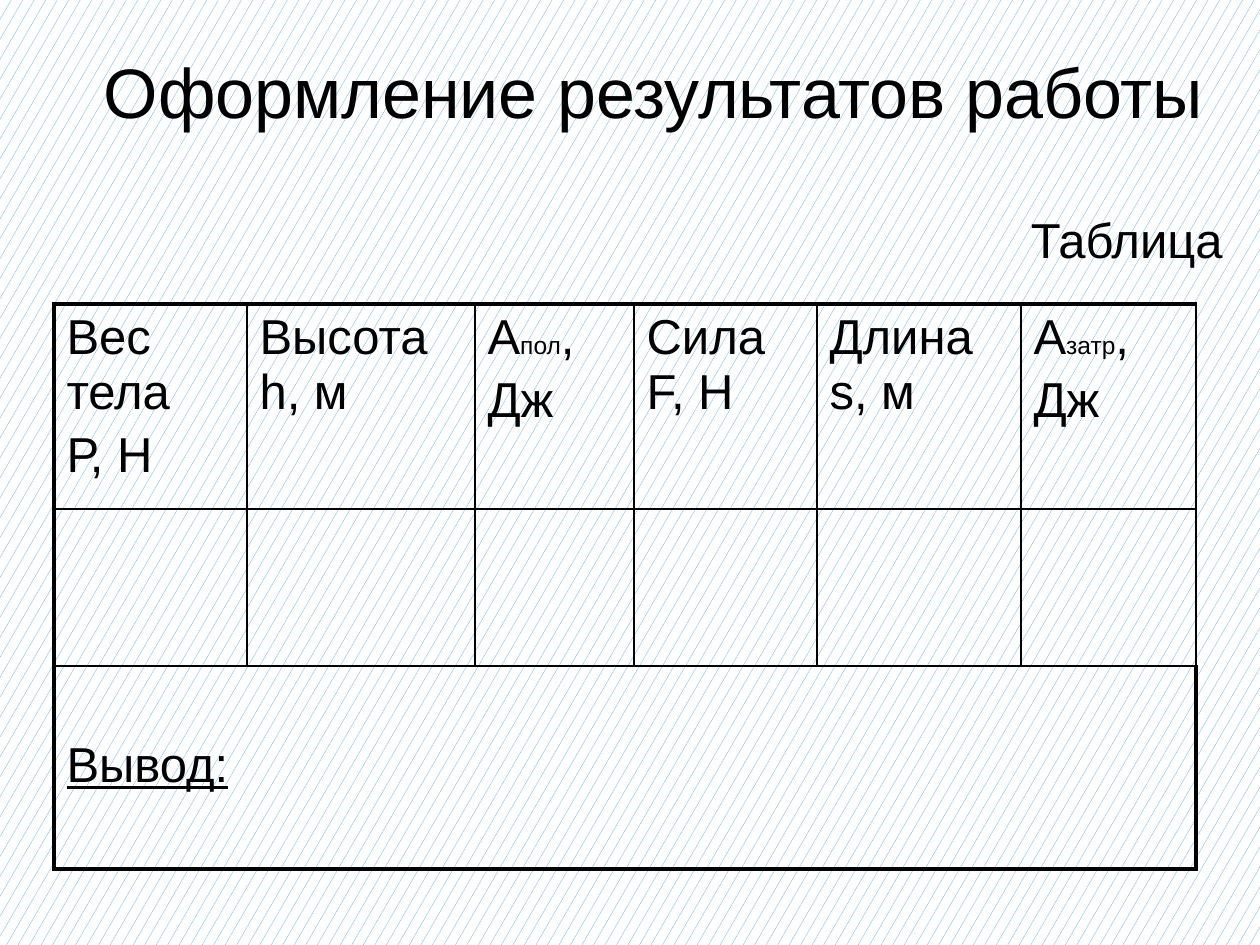
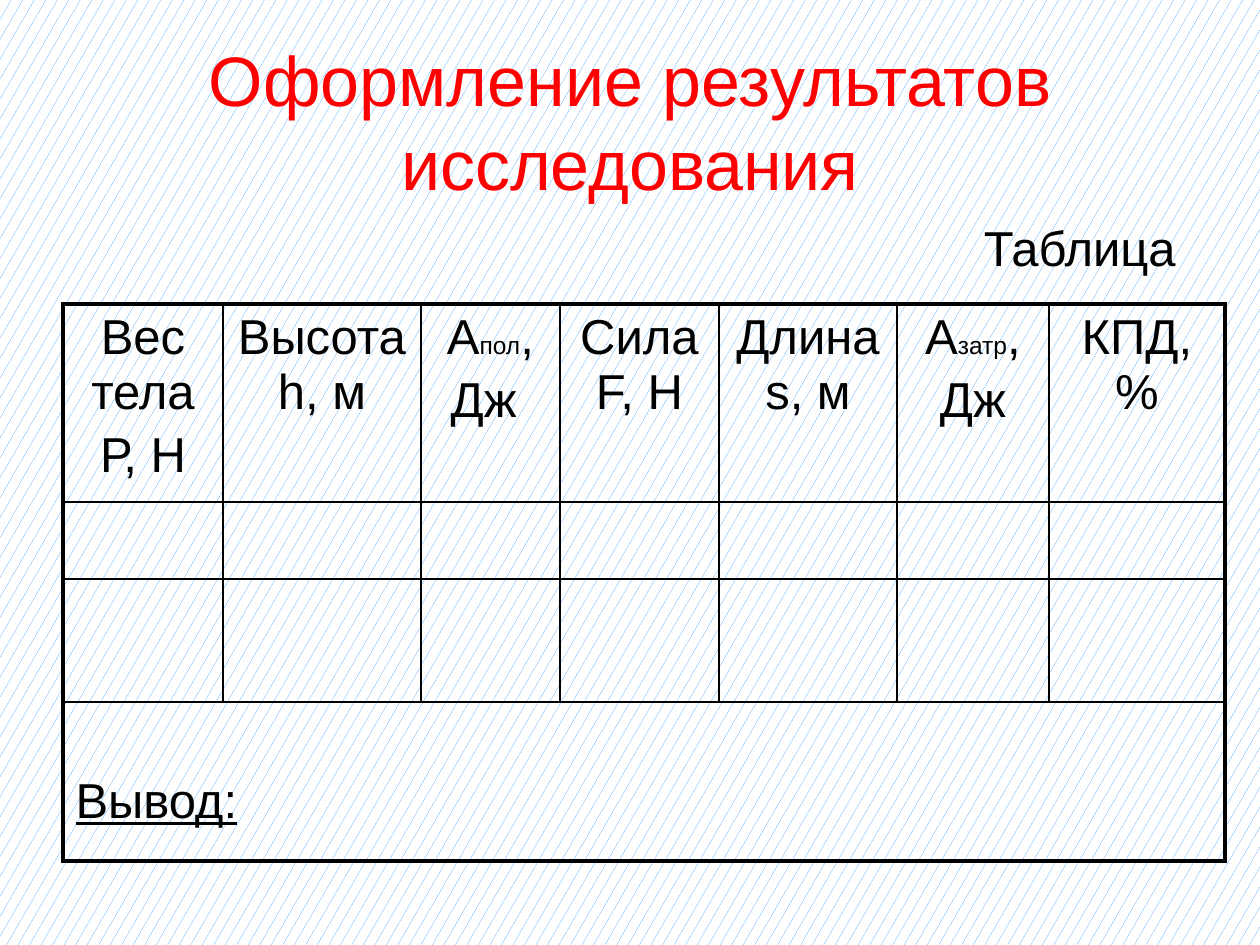
from lxml.etree import SubElement
from pptx import Presentation
from pptx.dml.color import RGBColor
from pptx.enum.dml import MSO_PATTERN
from pptx.enum.text import MSO_ANCHOR, PP_ALIGN
from pptx.oxml.ns import qn
from pptx.util import Pt

EMU_PER_PX = 914400 / 126
BLACK = RGBColor(0x00, 0x00, 0x00)
RED = RGBColor(0xFF, 0x00, 0x00)
WHITE = RGBColor(0xFF, 0xFF, 0xFF)
HATCH_BLUE = RGBColor(0x33, 0x99, 0xFF)
FONT = "Arial"
TITLE_SIZE, BODY_SIZE, INDEX_SIZE = 40, 28, 14
OUTER_LINE, INNER_LINE = 2.25, 1


def px(value):
    return round(value * EMU_PER_PX)


def add_run(paragraph, text, size=BODY_SIZE, color=BLACK):
    run = paragraph.add_run()
    run.text = text
    run.font.name = FONT
    run.font.size = Pt(size)
    run.font.color.rgb = color
    return run


WEIGHT = [[("Вес тела", BODY_SIZE)], [("Р, Н", BODY_SIZE)]]
HEIGHT = [[("Высота h, м", BODY_SIZE)]]
USEFUL_WORK = [[("А", BODY_SIZE), ("пол", INDEX_SIZE), (",", BODY_SIZE)], [("Дж ", BODY_SIZE)]]
FORCE = [[("Сила F, Н", BODY_SIZE)]]
LENGTH = [[("Длина s, м", BODY_SIZE)]]
SPENT_WORK = [[("А", BODY_SIZE), ("затр", INDEX_SIZE), (",", BODY_SIZE)], [("Дж", BODY_SIZE)]]
EFFICIENCY = [[("КПД, %", BODY_SIZE)]]
HEADERS = [WEIGHT, HEIGHT, USEFUL_WORK, FORCE, LENGTH, SPENT_WORK]

SLIDES = [
    {
        "title": "Оформление результатов работы",
        "title_box": (0, 42, 1215, 93),
        "title_color": BLACK,
        "title_align": PP_ALIGN.RIGHT,
        "caption_box": (935, 203, 300, 69),
        "table_left": 54,
        "columns": [193, 228, 159, 183, 204, 175],
        "rows": [205, 157, 203],
        "headers": HEADERS,
        "header_align": PP_ALIGN.LEFT,
        "right_line": INNER_LINE,
    },
    {
        "title": "Оформление результатов исследования",
        "title_box": (25, 30, 1210, 174),
        "title_color": RED,
        "title_align": PP_ALIGN.CENTER,
        "caption_box": (888, 211, 300, 69),
        "table_left": 63,
        "columns": [160, 198, 139, 159, 178, 152, 176],
        "rows": [186, 77, 123, 159],
        "headers": HEADERS + [EFFICIENCY],
        "header_align": PP_ALIGN.CENTER,
        "right_line": OUTER_LINE,
    },
]
TABLE_TOP = 304

presentation = Presentation()
presentation.slide_width = px(1260)
presentation.slide_height = px(945)

for content in SLIDES:
    slide = presentation.slides.add_slide(presentation.slide_layouts[6])
    background = slide.background.fill
    background.patterned()
    background.pattern = MSO_PATTERN.SMALL_CONFETTI
    background.fore_color.rgb = HATCH_BLUE
    background.back_color.rgb = WHITE

    for text, box, size, color, align in [
        (content["title"], content["title_box"], TITLE_SIZE, content["title_color"], content["title_align"]),
        ("Таблица", content["caption_box"], BODY_SIZE, BLACK, PP_ALIGN.RIGHT),
    ]:
        frame = slide.shapes.add_textbox(*map(px, box)).text_frame
        frame.word_wrap = True
        paragraph = frame.paragraphs[0]
        paragraph.alignment = align
        add_run(paragraph, text, size, color)

    columns, rows = content["columns"], content["rows"]
    table = slide.shapes.add_table(
        len(rows), len(columns), px(content["table_left"]), px(TABLE_TOP), px(sum(columns)), px(sum(rows))
    ).table
    table.first_row = False
    table.horz_banding = False
    for column, width in zip(table.columns, columns):
        column.width = px(width)
    for row, height in zip(table.rows, rows):
        row.height = px(height)

    last_row = len(rows) - 1
    conclusion = table.cell(last_row, 0)
    conclusion.merge(table.cell(last_row, len(columns) - 1))
    conclusion.margin_top = px(72)
    add_run(conclusion.text_frame.paragraphs[0], "Вывод:").font.underline = True

    for column_index, header in enumerate(content["headers"]):
        frame = table.cell(0, column_index).text_frame
        for index, runs in enumerate(header):
            paragraph = frame.add_paragraph() if index else frame.paragraphs[0]
            paragraph.alignment = content["header_align"]
            if index:
                paragraph.space_before = Pt(5)
            for text, size in runs:
                add_run(paragraph, text, size)

    for row_index in range(len(rows)):
        right_line = OUTER_LINE if row_index == last_row else content["right_line"]
        for column_index in range(len(columns)):
            cell = table.cell(row_index, column_index)
            if cell.is_spanned:
                continue
            cell.vertical_anchor = MSO_ANCHOR.TOP
            at_right = column_index + cell.span_width == len(columns)
            borders = {
                "a:lnL": INNER_LINE if column_index else OUTER_LINE,
                "a:lnR": right_line if at_right else INNER_LINE,
                "a:lnT": INNER_LINE if row_index else OUTER_LINE,
                "a:lnB": OUTER_LINE if row_index == last_row else INNER_LINE,
            }
            properties = cell._tc.get_or_add_tcPr()
            for tag, width in borders.items():
                line = SubElement(properties, qn(tag), w=str(Pt(width)))
                SubElement(SubElement(line, qn("a:solidFill")), qn("a:srgbClr"), val=str(BLACK))
            cell.fill.background()

presentation.save("out.pptx")
